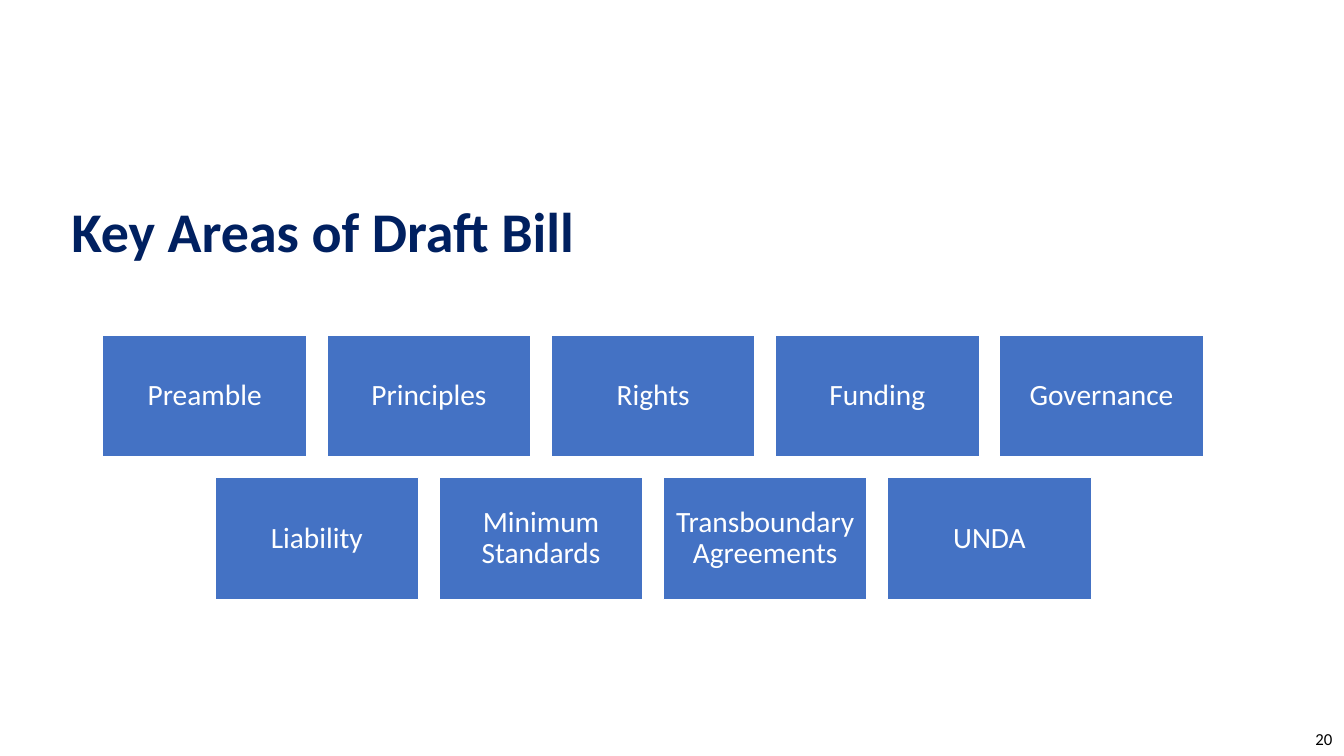
from dataclasses import dataclass

from pptx import Presentation
from pptx.dml.color import RGBColor
from pptx.enum.shapes import MSO_SHAPE
from pptx.enum.text import MSO_ANCHOR as Anchor, PP_ALIGN as Align
from pptx.util import Cm, Pt

FONT = "Calibri"
NAVY, BLUE, WHITE, BLACK = "002060", "4472C4", "FFFFFF", "000000"

TILE_WIDTH, TILE_HEIGHT = 5.14, 3.08
COLUMN_STEP, ROW_STEP = 5.65, 3.59
GRID_CENTER, GRID_TOP = 16.46, 8.44

AREA_ROWS = [
    ["Preamble", "Principles", "Rights", "Funding", "Governance"],
    ["Liability", "Minimum Standards", "Transboundary Agreements", "UNDA"],
]


@dataclass(frozen=True)
class Tile:
    label: str
    left: float
    top: float


def color(value: str) -> RGBColor:
    return RGBColor.from_string(value)


def write(shape, text: str, *, size: float, fill: str, bold: bool = False,
          align=Align.LEFT, anchor=Anchor.TOP, spacing: float = 1.0,
          inset: float | None = None) -> None:
    frame = shape.text_frame
    frame.word_wrap = True
    frame.vertical_anchor = anchor
    if inset is not None:
        frame.margin_left = frame.margin_right = Cm(inset)
        frame.margin_top = frame.margin_bottom = Cm(inset)
    para = frame.paragraphs[0]
    para.alignment = align
    para.line_spacing = spacing
    span = para.add_run()
    span.text = text
    span.font.name = FONT
    span.font.size = Pt(size)
    span.font.bold = bold
    span.font.color.rgb = color(fill)


def area_tiles() -> list[Tile]:
    """Place the areas in rows that share one center line."""
    tiles = []
    for row, labels in enumerate(AREA_ROWS):
        row_width = (len(labels) - 1) * COLUMN_STEP + TILE_WIDTH
        left = GRID_CENTER - row_width / 2
        for column, label in enumerate(labels):
            tiles.append(Tile(label, left + column * COLUMN_STEP,
                              GRID_TOP + row * ROW_STEP))
    return tiles


def draw_tile(page, tile: Tile) -> None:
    box = page.shapes.add_shape(MSO_SHAPE.RECTANGLE, Cm(tile.left), Cm(tile.top),
                                Cm(TILE_WIDTH), Cm(TILE_HEIGHT))
    box.shadow.inherit = False
    box.fill.solid()
    box.fill.fore_color.rgb = color(BLUE)
    box.line.color.rgb = color(WHITE)
    box.line.width = Pt(1)
    write(box, tile.label, size=21, fill=WHITE, align=Align.CENTER,
          anchor=Anchor.MIDDLE, spacing=0.9, inset=0.22)


def main() -> None:
    deck = Presentation()
    deck.slide_width, deck.slide_height = Cm(33.87), Cm(19.05)
    page = deck.slides.add_slide(deck.slide_layouts[6])

    title = page.shapes.add_textbox(Cm(1.55), Cm(5.03), Cm(25.93), Cm(2.59))
    write(title, "Key Areas of Draft Bill", size=40, fill=NAVY, bold=True, spacing=0.9)

    for tile in area_tiles():
        draw_tile(page, tile)

    number = page.shapes.add_textbox(Cm(26.49), Cm(18.21), Cm(7.34), Cm(0.84))
    write(number, "20", size=12, fill=BLACK, align=Align.RIGHT, anchor=Anchor.MIDDLE)

    deck.save("out.pptx")


if __name__ == "__main__":
    main()
